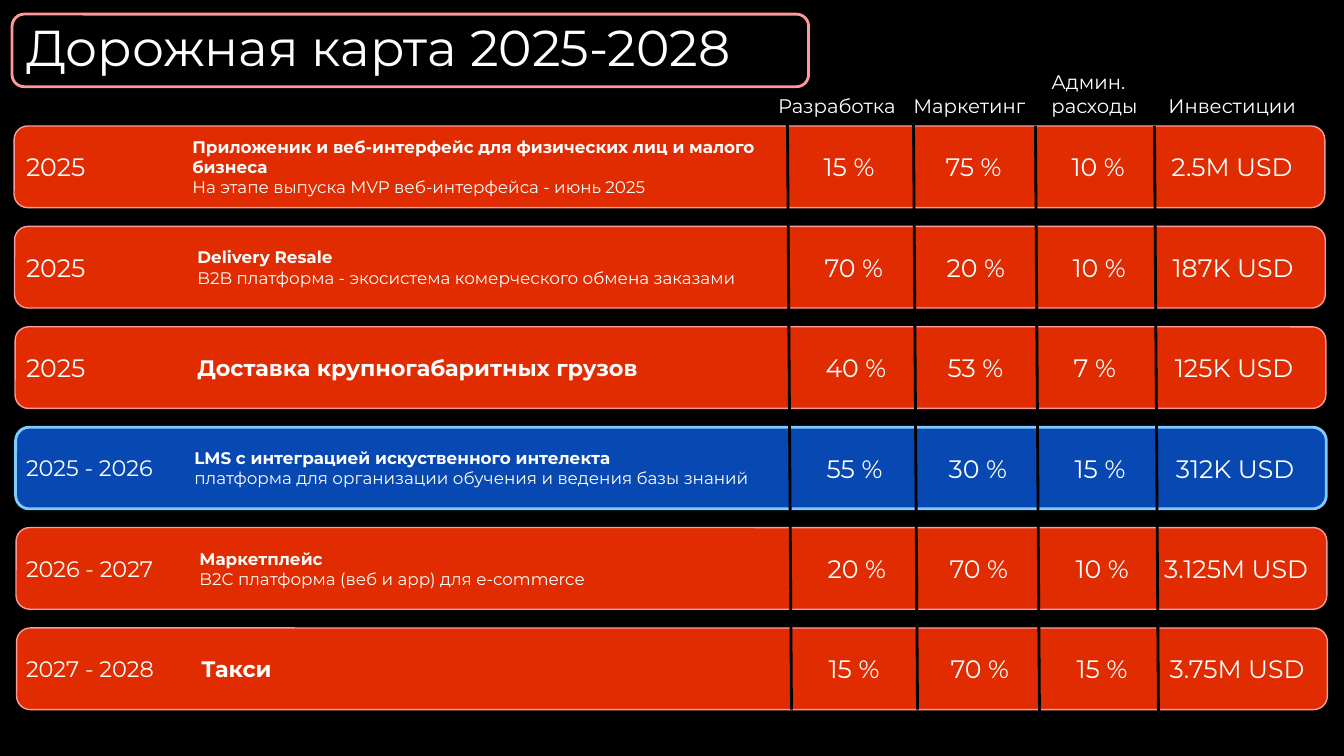
from lxml import etree
from pptx import Presentation
from pptx.dml.color import RGBColor
from pptx.enum.shapes import MSO_CONNECTOR, MSO_SHAPE
from pptx.enum.text import MSO_ANCHOR, PP_ALIGN
from pptx.oxml.ns import qn
from pptx.util import Inches, Pt

ROUND = MSO_SHAPE.ROUNDED_RECTANGLE
LINE = MSO_CONNECTOR.STRAIGHT
MIDDLE = MSO_ANCHOR.MIDDLE
BOTTOM = MSO_ANCHOR.BOTTOM
LEFT, CENTER = PP_ALIGN.LEFT, PP_ALIGN.CENTER

FONT = "Montserrat"
BLACK = RGBColor(0x00, 0x00, 0x00)
WHITE = RGBColor(0xFF, 0xFF, 0xFF)
RED = RGBColor(0xFF, 0x33, 0x00)
BLUE = RGBColor(0x0A, 0x67, 0xFE)
PINK = RGBColor(0xFF, 0x99, 0x99)
SKY = RGBColor(0x80, 0xCC, 0xFF)

TOP, STEP, TALL = 1.25, 0.996, 0.81
DRIFT = 0.01
SHARES = [8.07, 9.28, 10.53]
RULES = [(7.81, 1.17), (9.06, 1.17), (10.27, 1.25), (11.45, 1.25)]

HEADS = [
    ("Разработка", 7.62, 1.48),
    ("Маркетинг", 8.96, 1.39),
    ("Админ. расходы", 10.33, 1.14),
    ("Инвестиции", 11.49, 1.73),
]

ROWS = [
    ("2025", 1.81, ["Приложеник и веб-интерфейс для физических лиц и малого бизнеса",
                    "На этапе выпуска MVP веб-интерфейса - июнь 2025"],
     ["15 %", "75 %", "10 %"], "2.5M USD"),
    ("2025", 1.86, ["Delivery Resale",
                    "B2B платформа - экосистема комерческого обмена заказами"],
     ["70 %", "20 %", "10 %"], "187K USD"),
    ("2025", 1.86, ["Доставка крупногабаритных грузов"],
     ["40 %", "53 %", "7 %"], "125K USD"),
    ("2025 - 2026", 1.83, ["LMS с интеграцией искуственного интелекта",
                           "платформа для организации обучения и ведения базы знаний"],
     ["55 %", "30 %", "15 %"], "312K USD"),
    ("2026 - 2027", 1.88, ["Маркетплейс", "B2C платформа (веб и app) для e-commerce"],
     ["20 %", "70 %", "10 %"], "3.125M USD"),
    ("2027 - 2028", 1.90, ["Такси"],
     ["15 %", "70 %", "15 %"], "3.75M USD"),
]
ACCENT = 3


def style(para, size, bold=False):
    font = para.font
    font.name, font.size, font.bold = FONT, Pt(size), bold
    font.color.rgb = WHITE


def add_text(slide, box, lines, size, bold=False, align=LEFT, anchor=MIDDLE):
    frame = slide.shapes.add_textbox(*map(Inches, box)).text_frame
    frame.word_wrap = True
    frame.vertical_anchor = anchor
    frame.text = "\n".join(lines)
    for i, para in enumerate(frame.paragraphs):
        para.alignment = align
        style(para, size, bold and i == 0)


def add_bar(slide, box, edge, width, fill=None, alpha=100):
    bar = slide.shapes.add_shape(ROUND, *map(Inches, box))
    bar.shadow.inherit = False
    bar.line.color.rgb = edge
    bar.line.width = Pt(width)
    if fill is None:
        bar.fill.background()
        return
    bar.fill.solid()
    bar.fill.fore_color.rgb = fill
    tint = bar._element.spPr.find(qn("a:solidFill"))[0]
    etree.SubElement(tint, qn("a:alpha")).set("val", str(alpha * 1000))


def add_rule(slide, left, top):
    ends = left + 0.04, top + 5.87, left, top
    rule = slide.shapes.add_connector(LINE, *map(Inches, ends))
    rule.line.color.rgb = BLACK
    rule.line.width = Pt(2)
    etree.SubElement(rule._element.spPr, qn("a:effectLst"))


def add_title(slide, text):
    title = slide.shapes.title
    box = map(Inches, (0.16, 0.01, 8.96, 0.98))
    title.left, title.top, title.width, title.height = box
    frame = title.text_frame
    frame.text = text
    frame.vertical_anchor = MIDDLE
    para = frame.paragraphs[0]
    para.alignment = LEFT
    para.line_spacing = 0.9
    style(para, 36)


def add_row(slide, i, row):
    year, left, lines, shares, cost = row
    top = TOP + i * STEP
    shift = i * DRIFT
    look = (SKY, 2, BLUE, 70) if i == ACCENT else (PINK, 1, RED, 88)
    add_bar(slide, (0.14 + shift / 2, top, 13, TALL), *look)
    add_text(slide, (0.16, top, 1.7, TALL), [year], 18 if year == "2025" else 16)
    size = 12 if len(lines) > 1 else 16
    add_text(slide, (left, top, 6.2, TALL), lines, size, bold=True)
    for x, share in zip(SHARES, shares):
        add_text(slide, (x + shift, top, 0.97, TALL), [share], 18)
    add_text(slide, (11.32 + shift, top, 1.8, TALL), [cost], 18, align=CENTER)


def main():
    deck = Presentation()
    deck.slide_width, deck.slide_height = Inches(13.33), Inches(7.5)
    slide = deck.slides.add_slide(deck.slide_layouts[5])
    back = slide.background.fill
    back.solid()
    back.fore_color.rgb = BLACK
    add_title(slide, "Дорожная карта 2025-2028")
    for text, left, width in HEADS:
        add_text(slide, (left, 0.6, width, 0.61), [text], 14, anchor=BOTTOM)
    for i, row in enumerate(ROWS):
        add_row(slide, i, row)
    for left, top in RULES:
        add_rule(slide, left, top)
    add_bar(slide, (0.12, 0.14, 7.9, 0.72), PINK, 2)
    deck.save("out.pptx")


if __name__ == "__main__":
    main()
